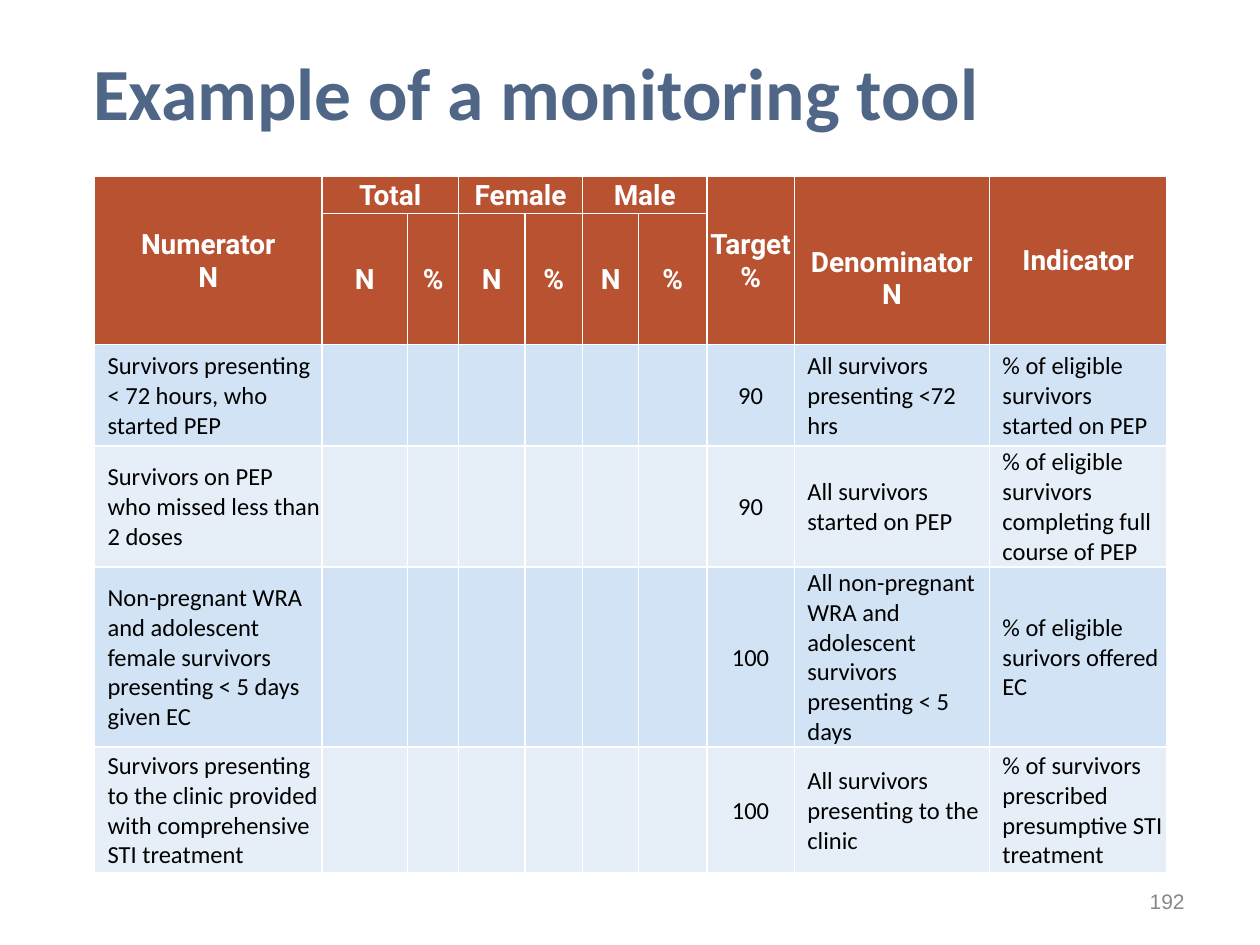
from dataclasses import dataclass

from pptx import Presentation
from pptx.dml.color import RGBColor
from pptx.enum.text import MSO_ANCHOR as Anchor, PP_ALIGN as Align
from pptx.util import Pt


@dataclass(frozen=True)
class Theme:
    title: str = "506687"
    header: str = "B85231"
    header_text: str = "FFFFFF"
    bands: tuple = ("D1E3F4", "E6EFF8")
    body_text: str = "000000"
    number: str = "888888"
    title_size: int = 42
    header_size: int = 16
    body_size: int = 14
    number_size: int = 12


COLUMN_WIDTHS = (130, 49, 29, 38, 33, 32, 39, 50, 111.5, 101.5)
ROW_HEIGHTS = (21, 75, 58, 69, 102, 72)
GROUPS = ("Total", "Female", "Male")
TALL_HEADERS = {0: "Numerator\nN", 7: "Target %", 8: "Denominator\nN", 9: "Indicator"}
TARGET_COLUMN = 7
ROWS = (
    ("Survivors presenting < 72 hours, who started PEP", "90",
     "All survivors presenting <72 hrs",
     "% of eligible survivors started on PEP"),
    ("Survivors on PEP who missed less than 2 doses", "90",
     "All survivors started on PEP",
     "% of eligible survivors completing full course of PEP"),
    ("Non-pregnant WRA and adolescent female survivors presenting < 5 days given EC", "100",
     "All non-pregnant WRA and adolescent survivors presenting < 5 days",
     "% of eligible surivors offered EC"),
    ("Survivors presenting to the clinic provided with comprehensive STI treatment", "100",
     "All survivors presenting to the clinic",
     "% of survivors prescribed presumptive STI treatment"),
)


class SlideBuilder:
    def __init__(self, prs, theme):
        self.theme = theme
        self.slide = prs.slides.add_slide(prs.slide_layouts[5])

    def set_text(self, tf, text, font, size, color, bold=False, align=Align.LEFT):
        tf.text = text
        for p in tf.paragraphs:
            p.alignment = align
            for r in p.runs:
                r.font.name = font
                r.font.size = Pt(size)
                r.font.bold = bold
                r.font.color.rgb = RGBColor.from_string(color)

    def title(self, text, left, top, width, height):
        sp = self.slide.shapes.title
        sp.left, sp.top, sp.width, sp.height = map(Pt, (left, top, width, height))
        tf = sp.text_frame
        tf.vertical_anchor = Anchor.MIDDLE
        self.set_text(tf, text, "Calibri", self.theme.title_size, self.theme.title, bold=True)
        tf.paragraphs[0].line_spacing = 0.9

    def table(self, left, top, widths, heights):
        frame = self.slide.shapes.add_table(
            len(heights), len(widths), Pt(left), Pt(top), Pt(sum(widths)), Pt(sum(heights)))
        table = frame.table
        for column, width in zip(table.columns, widths):
            column.width = Pt(width)
        for row, height in zip(table.rows, heights):
            row.height = Pt(height)
        return table

    def fill_cell(self, cell, color):
        cell.fill.solid()
        cell.fill.fore_color.rgb = RGBColor.from_string(color)
        cell.vertical_anchor = Anchor.MIDDLE
        cell.margin_left = cell.margin_right = cell.margin_top = Pt(0.75)
        cell.margin_bottom = Pt(0)

    def header_cell(self, cell, text):
        self.set_text(cell.text_frame, text, "Roboto", self.theme.header_size,
                      self.theme.header_text, bold=True, align=Align.CENTER)

    def body_cell(self, cell, text, centered=False):
        if not centered:
            cell.margin_left = Pt(7.5)
        self.set_text(cell.text_frame, text, "Calibri", self.theme.body_size,
                      self.theme.body_text, align=Align.CENTER if centered else Align.LEFT)

    def page_number(self, text, left, top, width, height):
        sp = self.slide.shapes.add_textbox(*map(Pt, (left, top, width, height)))
        tf = sp.text_frame
        tf.word_wrap = True
        tf.vertical_anchor = Anchor.MIDDLE
        self.set_text(tf, text, "Arial", self.theme.number_size, self.theme.number,
                      align=Align.RIGHT)


def add_monitoring_table(builder):
    theme = builder.theme
    table = builder.table(54, 101, COLUMN_WIDTHS, ROW_HEIGHTS)
    for i, row in enumerate(table.rows):
        color = theme.header if i < 2 else theme.bands[i % 2]
        for cell in row.cells:
            builder.fill_cell(cell, color)

    for col, text in TALL_HEADERS.items():
        table.cell(0, col).merge(table.cell(1, col))
        builder.header_cell(table.cell(0, col), text)
    table.cell(0, 8).margin_top = Pt(21)  # sets Denominator lower than its neighbours

    for i, group in enumerate(GROUPS):
        col = 1 + 2 * i
        table.cell(0, col).merge(table.cell(0, col + 1))
        builder.header_cell(table.cell(0, col), group)
        builder.header_cell(table.cell(1, col), "N")
        builder.header_cell(table.cell(1, col + 1), "%")

    for i, texts in enumerate(ROWS, start=2):
        for col, text in zip(TALL_HEADERS, texts):
            builder.body_cell(table.cell(i, col), text, centered=col == TARGET_COLUMN)


def main():
    prs = Presentation()
    prs.slide_width, prs.slide_height = Pt(720), Pt(540)
    builder = SlideBuilder(prs, Theme())
    builder.title("Example of a monitoring tool", 46, 30, 659, 51)
    add_monitoring_table(builder)
    builder.page_number("192", 516, 500.5, 168, 29)
    prs.save("out.pptx")


if __name__ == "__main__":
    main()
